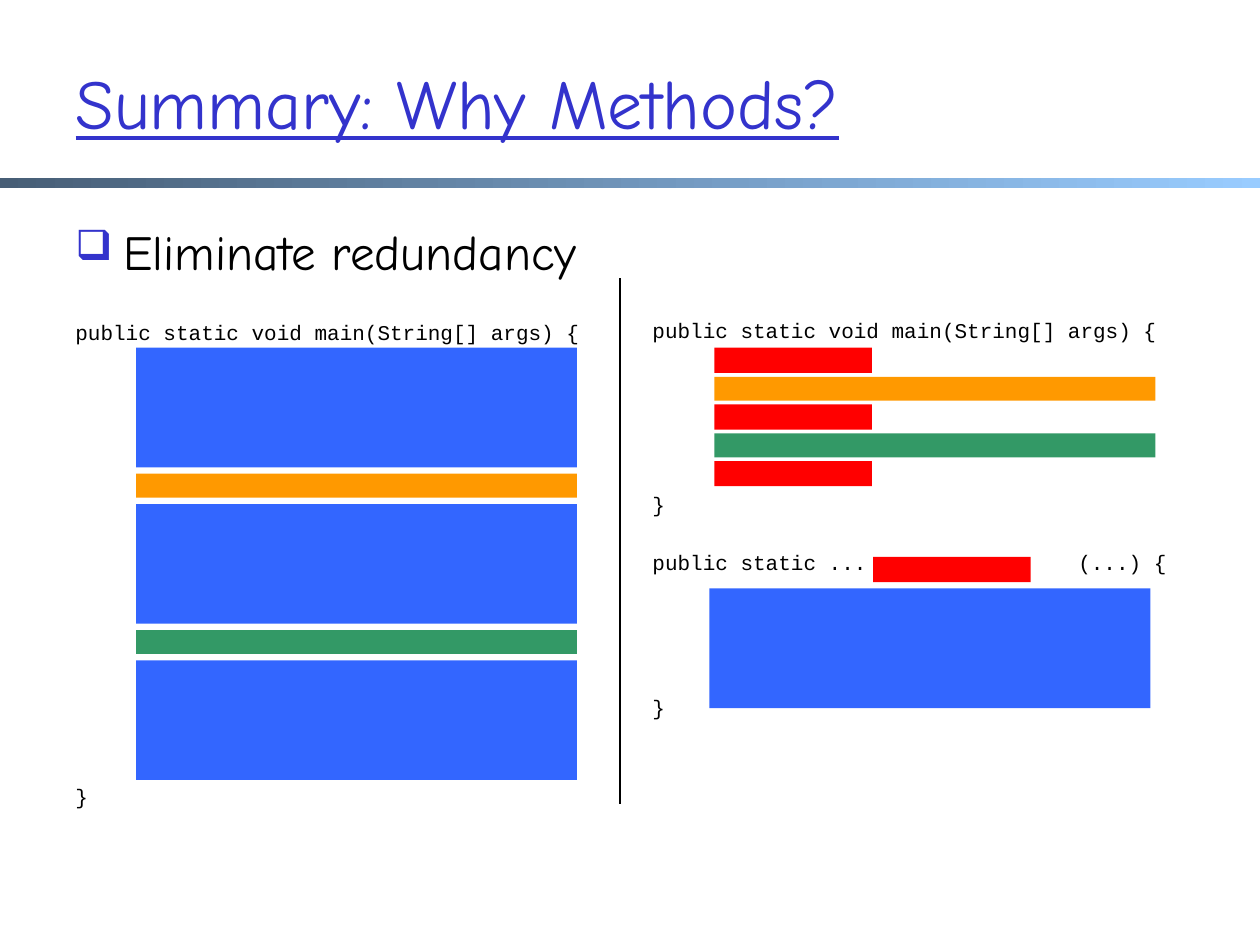
from lxml.etree import SubElement as Sub
from pptx import Presentation
from pptx.dml.color import RGBColor as RGB
from pptx.enum.shapes import MSO_CONNECTOR as Line, MSO_SHAPE as Kind
from pptx.enum.text import MSO_ANCHOR as Anchor, PP_ALIGN as Align
from pptx.oxml.ns import qn
from pptx.util import Inches as Inch, Pt

BLACK = RGB(0, 0, 0)
INDIGO = RGB(0x33, 0x33, 0xCC)
BLUE = RGB(0x33, 0x66, 0xFF)
ORANGE = RGB(0xFF, 0x99, 0x00)
GREEN = RGB(0x33, 0x99, 0x66)
RED = RGB(0xFF, 0, 0)
SLATE = RGB(0x47, 0x5E, 0x76)
SKY = RGB(0x99, 0xCC, 0xFF)

HEAD = dict(name="Comic Neue", size=Pt(40), underline=True)
BODY = dict(name="Comic Neue", size=Pt(28))
CODE = dict(name="Courier New", size=Pt(12))

WIDE, SHORT = 3.5, 1.25      # code bar widths
TALL, THIN, CALL = 0.95, 0.19, 0.2   # code bar heights
PITCH = 0.23                 # code line step
MAIN = "public static void main(String[] args) {"


def place(shape, *box):
    for key, size in zip(("left", "top", "width", "height"), box):
        setattr(shape, key, Inch(size))


def write(frame, text, color, font):
    frame.text = text
    para = frame.paragraphs[0]
    para.alignment = Align.LEFT
    for key, value in font.items():
        setattr(para.runs[0].font, key, value)
    para.runs[0].font.color.rgb = color
    return para


def label(slide, text, box, font):
    frame = slide.shapes.add_textbox(*map(Inch, box)).text_frame
    frame.word_wrap = True
    return write(frame, text, BLACK, font)


def bullet(para):
    props = para._p.get_or_add_pPr()
    props.set("marL", str(Inch(0.38)))
    props.set("indent", str(-Inch(0.38)))
    color = Sub(props, qn("a:buClr"))
    Sub(color, qn("a:srgbClr"), val=str(INDIGO))
    Sub(props, qn("a:buSzPct"), val="85000")
    Sub(props, qn("a:buChar"), char="❑")


def bar(slide, box, color=None):
    shape = slide.shapes.add_shape(Kind.RECTANGLE, *map(Inch, box))
    shape.shadow.inherit = False
    shape.line.fill.background()
    if color is not None:
        shape.fill.solid()
        shape.fill.fore_color.rgb = color
    return shape


def band(slide):
    fill = bar(slide, (0, 1.41, 10, 0.08)).fill
    fill.gradient()
    fill.gradient_angle = 0
    for stop, color in zip(fill.gradient_stops, (SLATE, SKY)):
        stop.color.rgb = color


def stack(slide, left, top, gap, rows):
    """Bars placed one below another with an equal gap."""
    for width, height, color in rows:
        bar(slide, (left, top, width, height), color)
        top += height + gap


def code(slide, left, top, lines):
    """Code text placed by line number, as wide as its characters."""
    for row, text in lines:
        width = 0.1 * len(text) + 0.3
        label(slide, text, (left, top + row * PITCH, width, 0.29), CODE)


def rule(slide, x, top, end):
    line = slide.shapes.add_connector(
        Line.STRAIGHT, Inch(x), Inch(top), Inch(x), Inch(end))
    line.line.color.rgb = BLACK
    line.line.width = Pt(1.5)
    Sub(line._element.spPr, qn("a:effectLst"))


def main():
    deck = Presentation()
    deck.slide_width, deck.slide_height = Inch(10), Inch(7.5)
    slide = deck.slides.add_slide(deck.slide_layouts[5])

    # Title and band
    band(slide)
    title = slide.shapes.title
    place(title, 0.5, 0.42, 9, 0.77)
    title.text_frame.vertical_anchor = Anchor.MIDDLE
    write(title.text_frame, "Summary: Why Methods?", INDIGO, HEAD)
    bullet(label(slide, "Eliminate redundancy", (0.5, 1.71, 4.67, 0.55), BODY))

    # Left: repeated code
    code(slide, 0.5, 2.49, [(0, MAIN), (16, "}")])
    block = (WIDE, TALL, BLUE)
    stack(slide, 1.08, 2.76, 0.05, [
        block, (WIDE, THIN, ORANGE), block, (WIDE, THIN, GREEN), block])

    rule(slide, 4.92, 2.21, 6.38)

    # Right: code that calls a method
    call = (SHORT, CALL, RED)
    stack(slide, 5.67, 2.76, 0.03, [
        call, (WIDE, THIN, ORANGE), call, (WIDE, THIN, GREEN), call])
    bar(slide, (6.93, 4.42, SHORT, CALL), RED)
    bar(slide, (5.63, 4.67, WIDE, TALL), BLUE)
    code(slide, 5.08, 2.47, [
        (0, MAIN), (6, "}"), (8, "public static ..."), (13, "}")])
    code(slide, 8.46, 2.47, [(8, "(...) {")])

    deck.save("out.pptx")


if __name__ == "__main__":
    main()
